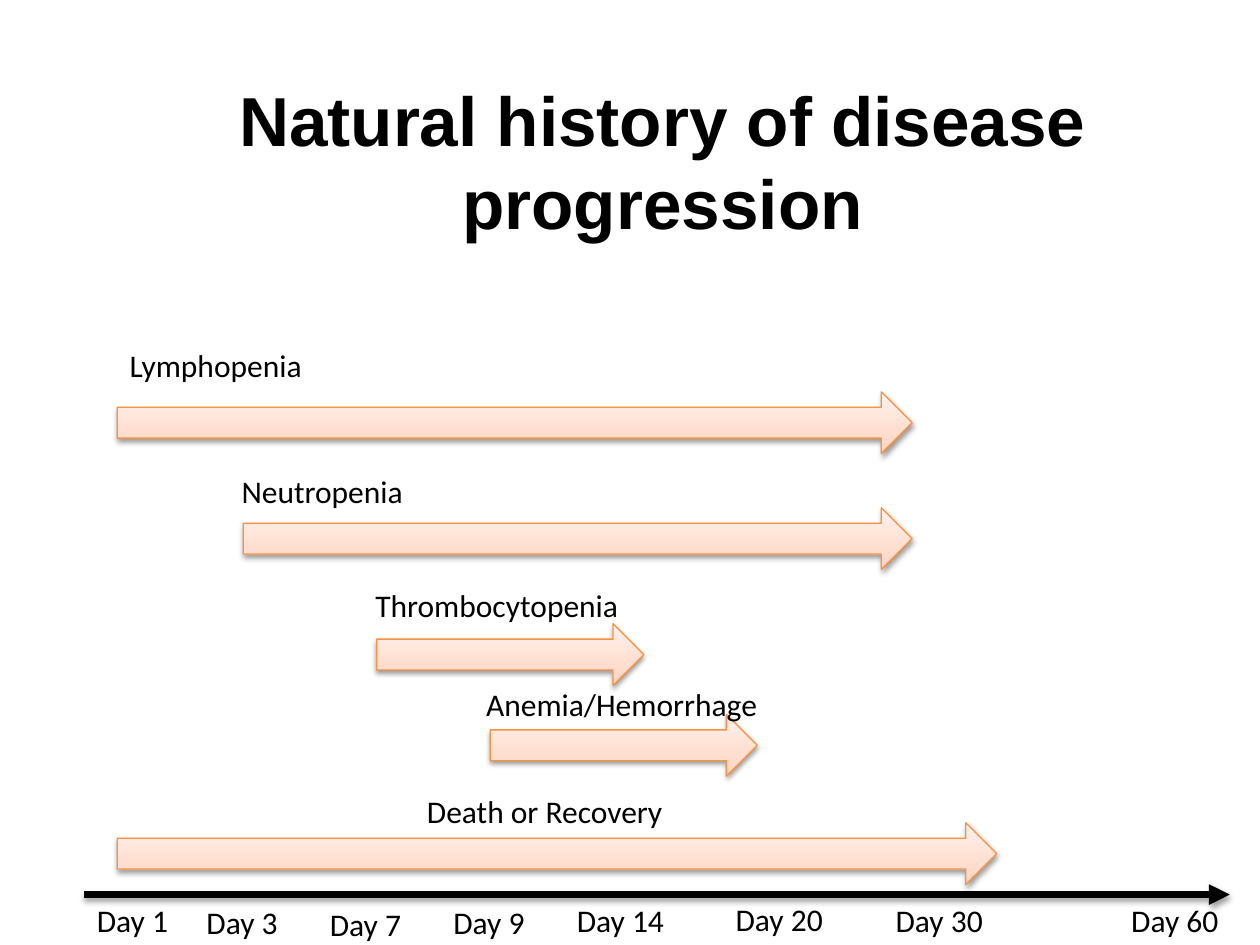
import pptx
import pptx.dml.color
import pptx.enum.shapes
import pptx.enum.text
import pptx.oxml
import pptx.oxml.ns
import pptx.util
from lxml import etree

COLUMNS, ROWS = 100, 75
CELL = pptx.util.Inches(0.1)
COLORS = {"ink": "000000", "arrow edge": "F69240"}
ARROW_GRADIENT = [(0, "FFD2BD"), (35, "FFDED0"), (100, "FFF2ED")]
LABEL_HEIGHT, ARROW_HEIGHT = 4, 4.9
AXIS_START, AXIS_END, AXIS_ROW = 6.7, 97.6, 71

# name, label column, label row, label width, arrow column, arrow row, arrow length
STAGES = [
    ("Lymphopenia", 9.3, 27, 15.9, 9.3, 31.1, 63.1),
    ("Neutropenia", 18.2, 37, 15, 19.3, 40.3, 53.1),
    ("Thrombocytopenia", 28.8, 46, 21.5, 29.9, 49.5, 21.2),
    ("Anemia/Hemorrhage", 37.6, 53.9, 23.8, 38.9, 56.7, 21.2),
    ("Death or Recovery", 32.9, 62.4, 21.5, 9.3, 65.3, 69.8),
]
# day, column, row
DAYS = [
    (1, 6.7, 71), (3, 15.4, 71.2), (7, 25.2, 71.3), (9, 35, 71.2),
    (14, 44.8, 71), (20, 57.4, 70.9), (30, 70.1, 71), (60, 88.8, 71),
]


def cells(*counts):
    return [round(count * CELL) for count in counts]


def color(name):
    return pptx.dml.color.RGBColor.from_string(COLORS[name])


def add_child(parent, tag, **attributes):
    child = etree.SubElement(parent, pptx.oxml.ns.qn(tag))
    for name, value in attributes.items():
        child.set(name, str(value))
    return child


def add_shadow(shape):
    """Cast a soft shadow straight down; call after fill and line are set."""
    effects = add_child(shape._element.spPr, "a:effectLst")
    shadow = add_child(effects, "a:outerShdw", blurRad=pptx.util.Pt(3.1),
                       dist=pptx.util.Pt(1.6), dir=90 * 60000, rotWithShape=0)
    shade = add_child(shadow, "a:srgbClr", val=COLORS["ink"])
    add_child(shade, "a:alpha", val=38000)


def add_text(page, text, place, size, font, bold=False):
    box = page.shapes.add_textbox(*cells(*place))
    para = box.text_frame.paragraphs[0]
    span = para.add_run()
    span.text = text
    span.font.size = pptx.util.Pt(size)
    span.font.name = font
    span.font.bold = bold
    span.font.color.rgb = color("ink")
    return box


def add_title(page, text):
    frame = add_text(page, text, (7.6, 6.5, 90, 12.5), 39.6, "Arial", True).text_frame
    frame.word_wrap = True
    frame.vertical_anchor = pptx.enum.text.MSO_ANCHOR.MIDDLE
    frame.paragraphs[0].alignment = pptx.enum.text.PP_ALIGN.CENTER


def add_label(page, text, column, row, width):
    box = add_text(page, text, (column, row, width, LABEL_HEIGHT), 18, "Calibri")
    box.text_frame.word_wrap = False
    box.text_frame.auto_size = pptx.enum.text.MSO_AUTO_SIZE.SHAPE_TO_FIT_TEXT


def add_stage_arrow(page, column, row, length):
    arrow = page.shapes.add_shape(pptx.enum.shapes.MSO_SHAPE.RIGHT_ARROW,
                                  *cells(column, row, length, ARROW_HEIGHT))
    arrow.fill.gradient()
    arrow.fill.gradient_angle = 90
    stops = arrow._element.spPr.find(".//" + pptx.oxml.ns.qn("a:gsLst"))
    for stop in list(stops):
        stops.remove(stop)
    for percent, tint in ARROW_GRADIENT:
        stop = add_child(stops, "a:gs", pos=percent * 1000)
        add_child(stop, "a:srgbClr", val=tint)
    arrow.line.color.rgb = color("arrow edge")
    arrow.line.width = pptx.util.Pt(0.75)
    add_shadow(arrow)


def add_time_axis(page):
    axis = page.shapes.add_connector(
        pptx.enum.shapes.MSO_CONNECTOR.STRAIGHT,
        *cells(AXIS_START, AXIS_ROW, AXIS_END, AXIS_ROW))
    axis.line.color.rgb = color("ink")
    axis.line.width = pptx.util.Pt(4)
    add_child(axis.line._get_or_add_ln(), "a:tailEnd", type="triangle")
    add_shadow(axis)


def main():
    deck = pptx.Presentation()
    deck.slide_width, deck.slide_height = cells(COLUMNS, ROWS)
    page = deck.slides.add_slide(deck.slide_layouts[6])
    add_title(page, "Natural history of disease progression")
    for name, label_column, label_row, label_width, *arrow_place in STAGES:
        add_stage_arrow(page, *arrow_place)
        add_label(page, name, label_column, label_row, label_width)
    add_time_axis(page)
    for day, column, row in DAYS:
        add_label(page, f"Day {day}", column, row, 7.7 if day < 10 else 9)
    deck.save("out.pptx")


if __name__ == "__main__":
    main()
